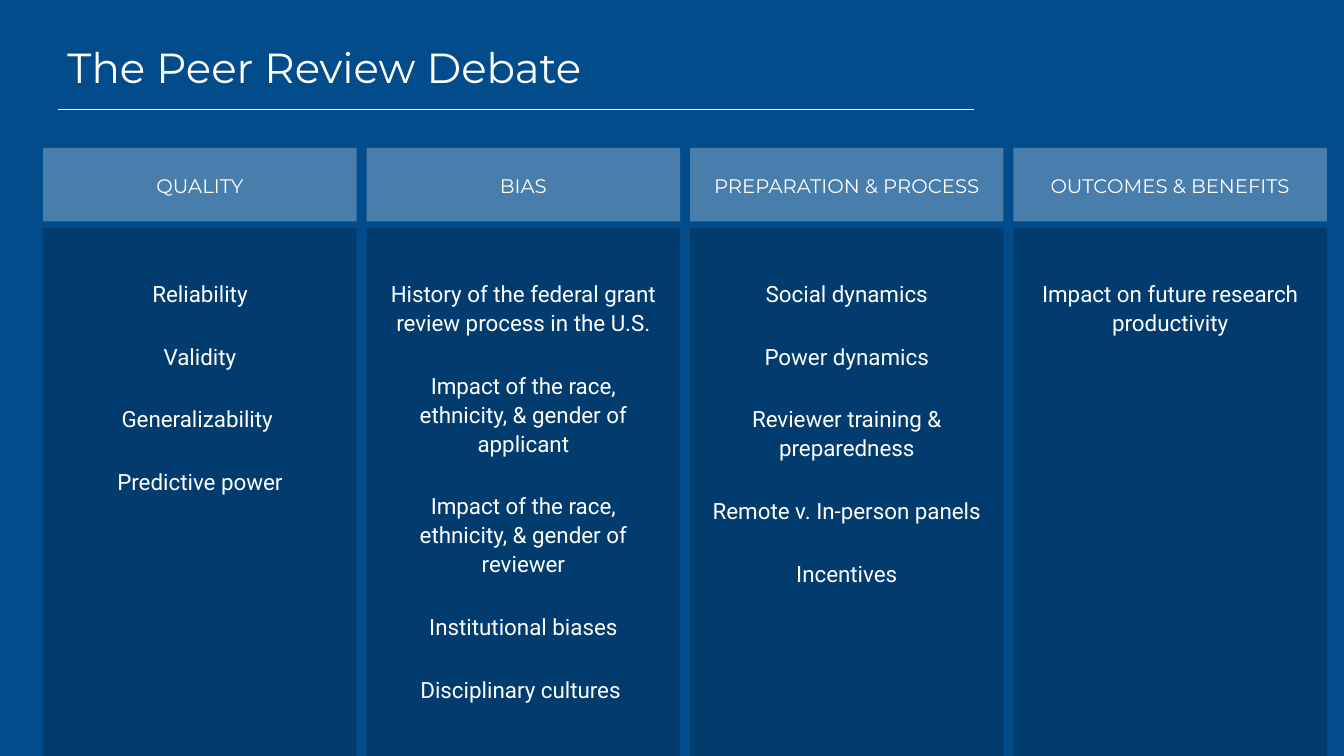
from dataclasses import dataclass

from lxml.etree import SubElement
from pptx import Presentation
from pptx.dml.color import RGBColor
from pptx.enum.shapes import MSO_CONNECTOR, MSO_SHAPE
from pptx.enum.text import MSO_ANCHOR, PP_ALIGN
from pptx.oxml.ns import qn
from pptx.util import Cm, Pt


@dataclass(frozen=True)
class Theme:
    background: RGBColor = RGBColor(0x03, 0x4C, 0x8B)
    text: RGBColor = RGBColor(0xFF, 0xFF, 0xFF)
    heading_tint: RGBColor = RGBColor(0xFF, 0xFF, 0xFF)
    body_shade: RGBColor = RGBColor(0x00, 0x00, 0x00)
    heading_opacity: int = 28
    body_opacity: int = 20
    heading_font: str = "Montserrat"
    body_font: str = "Roboto"
    title_size: Pt = Pt(30)
    heading_size: Pt = Pt(14)
    body_size: Pt = Pt(16)


THEME = Theme()

TOPICS = {
    "QUALITY": [
        "Reliability",
        "Validity",
        "Generalizability ",
        "Predictive power",
    ],
    "BIAS": [
        "History of the federal grant review process in the U.S.",
        "Impact of the race, ethnicity, & gender of applicant",
        "Impact of the race, ethnicity, & gender of reviewer",
        "Institutional biases",
        "Disciplinary cultures ",
    ],
    "PREPARATION & PROCESS": [
        "Social dynamics",
        "Power dynamics",
        "Reviewer training & preparedness",
        "Remote v. In-person panels",
        "Incentives",
    ],
    "OUTCOMES & BENEFITS": [
        "Impact on future research productivity",
    ],
}

FIRST_LEFT, COLUMN_WIDTH, COLUMN_PITCH = Cm(1.09), Cm(7.9), Cm(8.15)
HEADING_TOP, HEADING_HEIGHT = Cm(3.73), Cm(1.85)
BODY_TOP, BODY_HEIGHT = Cm(5.74), Cm(13.31)
RULE_LEFT, RULE_RIGHT, RULE_TOP = Cm(1.45), Cm(24.54), Cm(2.77)


def add_panel(left, top, height, color, opacity):
    """Add a borderless, see-through column rectangle and return its text frame."""
    panel = slide.shapes.add_shape(MSO_SHAPE.RECTANGLE, left, top, COLUMN_WIDTH, height)
    panel.shadow.inherit = False
    panel.line.fill.background()
    panel.fill.solid()
    panel.fill.fore_color.rgb = color
    tint = panel.fill._xPr.find(".//" + qn("a:srgbClr"))
    SubElement(tint, qn("a:alpha"), val=str(opacity * 1000))
    frame = panel.text_frame
    frame.word_wrap = True
    frame.margin_left = frame.margin_right = Cm(0.51)
    return frame


def write_paragraphs(frame, lines, font_name, size, align, line_spacing):
    for index, line in enumerate(lines):
        paragraph = frame.add_paragraph() if index else frame.paragraphs[0]
        paragraph.alignment = align
        paragraph.line_spacing = line_spacing
        paragraph.space_before = Pt(24 if index else 0)
        run = paragraph.add_run()
        run.text = line
        run.font.name = font_name
        run.font.size = size
        run.font.color.rgb = THEME.text


presentation = Presentation()
presentation.slide_width, presentation.slide_height = Cm(33.87), Cm(19.05)
slide = presentation.slides.add_slide(presentation.slide_layouts[6])
slide.background.fill.solid()
slide.background.fill.fore_color.rgb = THEME.background

title = slide.shapes.add_textbox(RULE_LEFT, Cm(0.76), Cm(29.74), Cm(2.01)).text_frame
title.word_wrap = True
title.vertical_anchor = MSO_ANCHOR.MIDDLE
write_paragraphs(title, ["The Peer Review Debate"], THEME.heading_font,
                 THEME.title_size, PP_ALIGN.LEFT, 0.9)

title_rule = slide.shapes.add_connector(
    MSO_CONNECTOR.STRAIGHT, RULE_LEFT, RULE_TOP, RULE_RIGHT, RULE_TOP)
title_rule.line.color.rgb = THEME.text
title_rule.line.width = Pt(0.75)
SubElement(title_rule._element.spPr, qn("a:effectLst"))

for column, (topic, points) in enumerate(TOPICS.items()):
    left = FIRST_LEFT + column * COLUMN_PITCH

    heading = add_panel(left, HEADING_TOP, HEADING_HEIGHT,
                        THEME.heading_tint, THEME.heading_opacity)
    heading.vertical_anchor = MSO_ANCHOR.MIDDLE
    write_paragraphs(heading, [topic], THEME.heading_font,
                     THEME.heading_size, PP_ALIGN.CENTER, 1.08)

    body = add_panel(left, BODY_TOP, BODY_HEIGHT,
                     THEME.body_shade, THEME.body_opacity)
    body.vertical_anchor = MSO_ANCHOR.TOP
    body.margin_top = Cm(1.27)
    write_paragraphs(body, points, THEME.body_font,
                     THEME.body_size, PP_ALIGN.CENTER, 1.08)

presentation.save("out.pptx")
